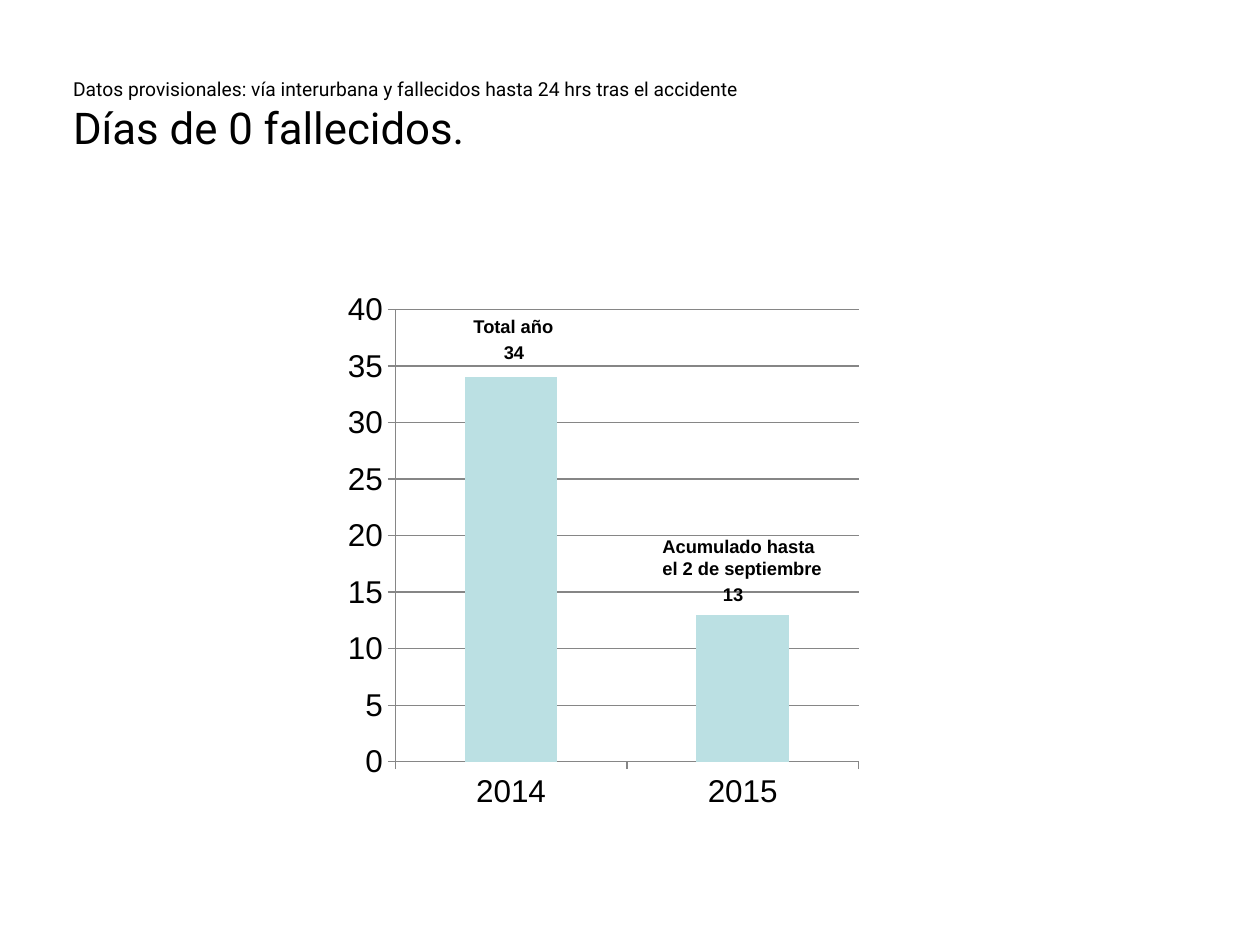
import pptx
import pptx.chart.data
import pptx.dml.color
import pptx.enum.chart
import pptx.enum.text
import pptx.util
from lxml import etree
from pptx.util import Inches, Pt

# Content
TITLE_LINES = [
    ("Datos provisionales: vía interurbana y fallecidos hasta 24 hrs tras el accidente", 11),
    ("Días de 0 fallecidos.", 25),
]
DEATH_FREE_DAYS = {"2014": 34, "2015": 13}
# caption, year, box (left, top, width, height), indent of the figure
BAR_LABELS = [
    ("Total año", "2014", (3.66, 2.65, 0.94, 0.28), 0.24),
    ("Acumulado hasta el 2 de septiembre", "2015", (5.16, 4.38, 1.5, 0.47), 0.48),
]
TITLE_BOX = (0.48, 0.29, 9, 1.25)
CHART_BOX = (2.4, 2.18, 4.42, 4.32)
PLOT_AREA = {"x": 0.167, "y": 0.064, "w": 0.833, "h": 0.831}
BLACK, GREY, BAR_BLUE = "000000", "868686", "BBE0E3"


def color(hex_value):
    return pptx.dml.color.RGBColor.from_string(hex_value)


def set_all(target, values):
    for name, value in values.items():
        setattr(target, name, value)


def format_font(font, name, size, bold=False):
    set_all(font, {"name": name, "size": Pt(size), "bold": bold})
    font.color.rgb = color(BLACK)


def format_line(line):
    line.color.rgb = color(GREY)
    line.width = Pt(0.75)


def place(shape, box):
    set_all(shape, dict(zip(("left", "top", "width", "height"), map(Inches, box))))


def add_title(slide):
    title = slide.shapes.title
    place(title, TITLE_BOX)
    title.text_frame.vertical_anchor = pptx.enum.text.MSO_ANCHOR.MIDDLE
    paragraph = title.text_frame.paragraphs[0]
    paragraph.alignment = pptx.enum.text.PP_ALIGN.LEFT
    for index, (text, size) in enumerate(TITLE_LINES):
        if index:
            paragraph.add_line_break()
        run = paragraph.add_run()
        run.text = text
        format_font(run.font, "Roboto", size)


def set_plot_area(chart):
    plot_area = chart.plots[0]._element.getparent()
    namespace = etree.QName(plot_area).namespace
    for old_layout in plot_area.findall(f"{{{namespace}}}layout"):
        plot_area.remove(old_layout)
    layout = etree.Element(f"{{{namespace}}}layout")
    manual = etree.SubElement(layout, f"{{{namespace}}}manualLayout")
    settings = {"layoutTarget": "inner", "xMode": "edge", "yMode": "edge", **PLOT_AREA}
    for tag, value in settings.items():
        etree.SubElement(manual, f"{{{namespace}}}{tag}").set("val", str(value))
    plot_area.insert(0, layout)


def add_days_chart(slide):
    chart_data = pptx.chart.data.CategoryChartData()
    chart_data.categories = list(DEATH_FREE_DAYS)
    chart_data.add_series("Series 1", list(DEATH_FREE_DAYS.values()))
    chart = slide.shapes.add_chart(
        pptx.enum.chart.XL_CHART_TYPE.COLUMN_STACKED, *map(Inches, CHART_BOX), chart_data
    ).chart
    set_all(chart, {"has_legend": False, "has_title": False})
    format_font(chart.font, "Arial", 18)

    plot = chart.plots[0]
    set_all(plot, {"gap_width": 150, "overlap": 100, "vary_by_categories": False})
    fill = plot.series[0].format.fill
    fill.solid()
    fill.fore_color.rgb = color(BAR_BLUE)

    for axis in (chart.category_axis, chart.value_axis):
        axis.major_tick_mark = pptx.enum.chart.XL_TICK_MARK.OUTSIDE
        format_line(axis.format.line)
    set_all(chart.value_axis, {"minimum_scale": 0, "maximum_scale": 40,
                               "major_unit": 5, "has_major_gridlines": True})
    format_line(chart.value_axis.major_gridlines.format.line)
    set_plot_area(chart)


def add_bar_label(slide, caption, year, box, indent):
    frame = slide.shapes.add_textbox(*map(Inches, box)).text_frame
    set_all(frame, {"word_wrap": True,
                    "vertical_anchor": pptx.enum.text.MSO_ANCHOR.BOTTOM})
    figure = frame.add_paragraph()
    figure.space_before = Pt(2.1)
    figure._p.get_or_add_pPr().set("marL", str(Inches(indent)))
    for paragraph, text in ((frame.paragraphs[0], caption),
                            (figure, str(DEATH_FREE_DAYS[year]))):
        run = paragraph.add_run()
        run.text = text
        format_font(run.font, "Arial", 10.5, bold=True)


def main():
    presentation = pptx.Presentation()
    set_all(presentation, {"slide_width": Inches(10), "slide_height": Inches(7.5)})
    slide = presentation.slides.add_slide(presentation.slide_layouts[5])
    add_title(slide)
    add_days_chart(slide)
    for label in BAR_LABELS:
        add_bar_label(slide, *label)
    presentation.save("out.pptx")


if __name__ == "__main__":
    main()
